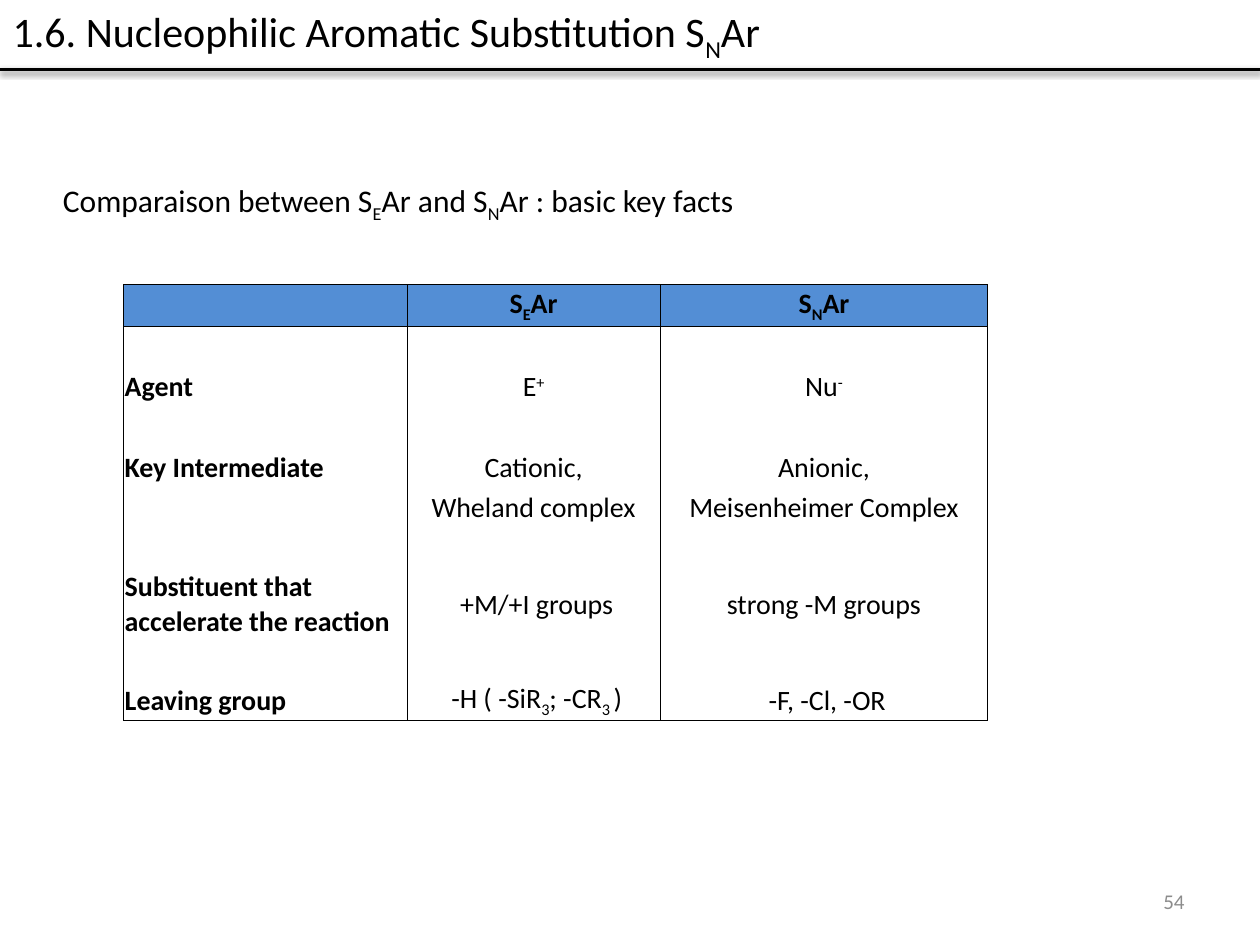
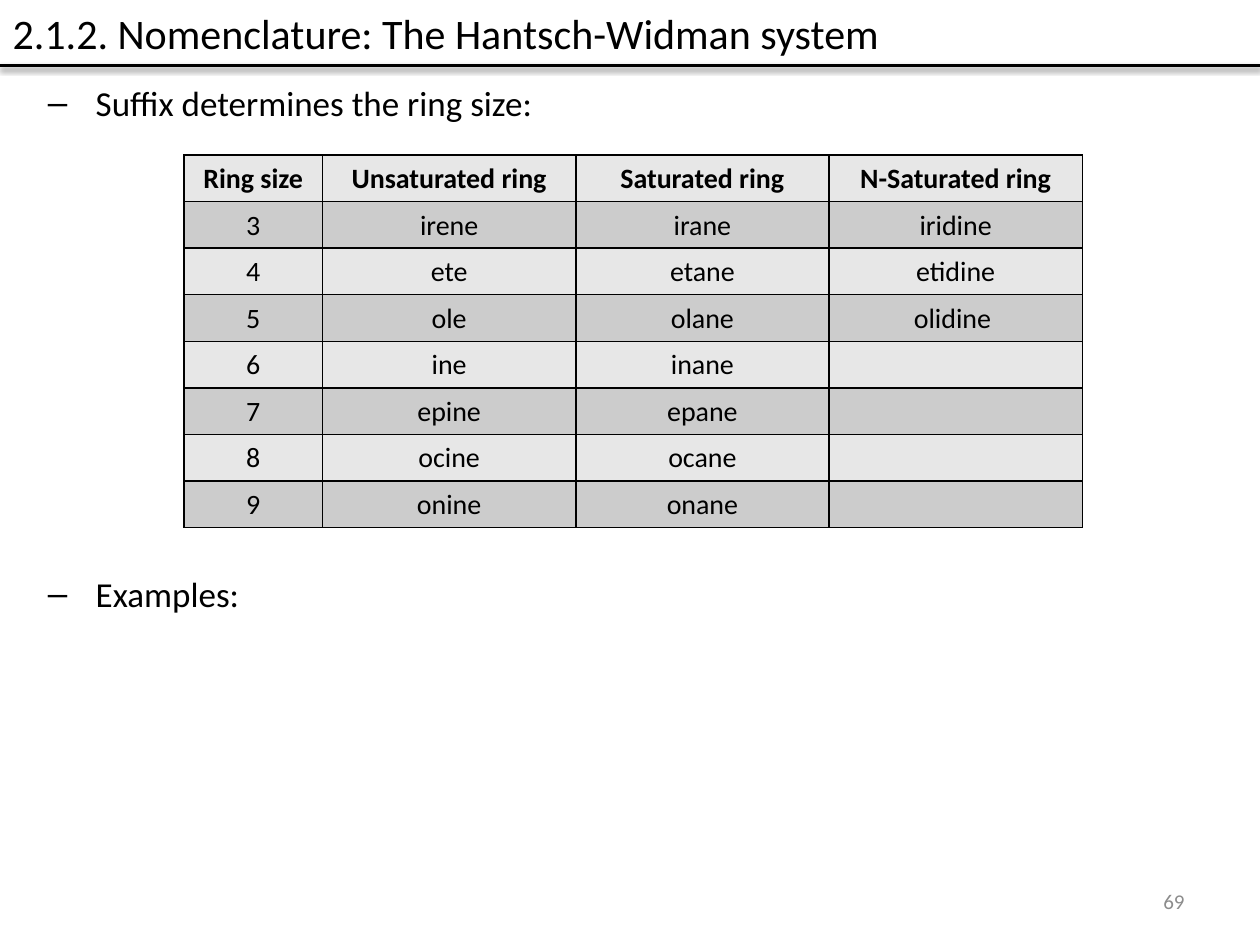
from dataclasses import dataclass
from typing import NamedTuple

from lxml import etree
from pptx import Presentation
from pptx.dml.color import RGBColor
from pptx.enum.shapes import MSO_CONNECTOR
from pptx.enum.text import MSO_ANCHOR, MSO_AUTO_SIZE, PP_ALIGN
from pptx.oxml.ns import qn
from pptx.util import Inches, Pt

LEFT, CENTER, RIGHT = PP_ALIGN.LEFT, PP_ALIGN.CENTER, PP_ALIGN.RIGHT
TOP, MIDDLE = MSO_ANCHOR.TOP, MSO_ANCHOR.MIDDLE
FIXED_SIZE = MSO_AUTO_SIZE.NONE
STRAIGHT = MSO_CONNECTOR.STRAIGHT

FONT = "Calibri"
COLORS = {
    "text": "000000",
    "line": "000000",
    "page_number": "8C8C8C",
    "blue_header": "538ED5",
    "light_band": "E7E7E7",
    "dark_band": "CCCCCC",
}
TITLE_ONLY, TITLE_AND_CONTENT = 5, 1


class Run(NamedTuple):
    text: str
    baseline: int = 0


class Box(NamedTuple):
    left: float
    top: float
    width: float
    height: float


@dataclass
class TextStyle:
    size: float
    color: str = "text"
    bold: bool = False
    align: PP_ALIGN = LEFT


@dataclass
class CellStyle:
    text: TextStyle
    fill: str | None
    borders: str


@dataclass
class TableSpec:
    left: float
    top: float
    columns: list[float]
    rows: list[float]
    line_width: float


Words = list[Run]


def plain(text: str) -> Words:
    return [Run(text)] if text else []


def sub(text: str) -> Run:
    return Run(text, -25)


def sup(text: str) -> Run:
    return Run(text, 30)


def reaction(letter: str) -> Words:
    """Name of a substitution type, such as S with a lowered E, then Ar."""
    return [Run("S"), sub(letter), Run("Ar")]


# Text helpers
def write(paragraph, words: Words, style: TextStyle) -> None:
    paragraph.alignment = style.align
    for part in words:
        run = paragraph.add_run()
        run.text = part.text
        run.font.name = FONT
        run.font.size = Pt(style.size)
        run.font.bold = style.bold
        run.font.color.rgb = RGBColor.from_string(COLORS[style.color])
        if part.baseline:
            run._r.get_or_add_rPr().set("baseline", str(part.baseline * 1000))


def place(shape, box: Box, anchor: MSO_ANCHOR):
    shape.left, shape.top, shape.width, shape.height = map(Inches, box)
    frame = shape.text_frame
    frame.word_wrap = True
    frame.auto_size = FIXED_SIZE
    frame.vertical_anchor = anchor
    return frame


def add_text(slide, box: Box, words: Words, style: TextStyle,
             anchor: MSO_ANCHOR = MIDDLE):
    frame = place(slide.shapes.add_textbox(*map(Inches, box)), box, anchor)
    write(frame.paragraphs[0], words, style)
    return frame


def write_dash_item(paragraph, words: Words, space_before: float) -> None:
    paragraph.space_before = Pt(space_before)
    write(paragraph, words, TextStyle(20))
    properties = paragraph._p.get_or_add_pPr()
    properties.set("marL", str(Inches(0.38)))
    properties.set("indent", str(-Inches(0.38)))
    etree.SubElement(properties, qn("a:buChar"), char="–")


# Parts shared by the slides
def add_title_rule(slide, y: float) -> None:
    rule = slide.shapes.add_connector(
        STRAIGHT, Inches(0), Inches(y), Inches(10), Inches(y))
    rule.line.color.rgb = RGBColor.from_string(COLORS["line"])
    rule.line.width = Pt(2)
    effects = etree.SubElement(rule._element.spPr, qn("a:effectLst"))
    shadow = etree.SubElement(
        effects, qn("a:outerShdw"), blurRad=str(Pt(3.1)), dist=str(Pt(1.6)),
        dir=str(90 * 60000), rotWithShape="0")
    color = etree.SubElement(shadow, qn("a:srgbClr"), val=COLORS["line"])
    etree.SubElement(color, qn("a:alpha"), val="38000")


def add_slide(presentation, layout: int, title: Words, title_width: float,
              rule_y: float, page: int):
    slide = presentation.slides.add_slide(presentation.slide_layouts[layout])
    frame = place(slide.shapes.title, Box(0, 0, title_width, rule_y), MIDDLE)
    write(frame.paragraphs[0], title, TextStyle(24))
    add_title_rule(slide, rule_y)
    add_text(slide, Box(7.17, 6.95, 2.33, 0.4), plain(str(page)),
             TextStyle(12, "page_number", align=RIGHT))
    return slide


# Table helpers
def set_borders(cell, sides: str, width: float) -> None:
    properties = cell._tc.get_or_add_tcPr()
    for side in "LRTB":
        line = etree.SubElement(properties, qn(f"a:ln{side}"), w=str(Pt(width)))
        if side in sides:
            fill = etree.SubElement(line, qn("a:solidFill"))
            etree.SubElement(fill, qn("a:srgbClr"), val=COLORS["line"])
        else:
            etree.SubElement(line, qn("a:noFill"))


def fill_cell(cell, words: Words, style: CellStyle, line_width: float) -> None:
    cell.margin_left = cell.margin_right = cell.margin_top = Inches(0.01)
    cell.margin_bottom = 0
    cell.vertical_anchor = MIDDLE
    set_borders(cell, style.borders, line_width)
    if style.fill:
        cell.fill.solid()
        cell.fill.fore_color.rgb = RGBColor.from_string(COLORS[style.fill])
    else:
        cell.fill.background()
    write(cell.text_frame.paragraphs[0], words, style.text)


def add_table(slide, spec: TableSpec, content: list[list[Words]],
              style_of) -> None:
    table = slide.shapes.add_table(
        len(spec.rows), len(spec.columns), Inches(spec.left), Inches(spec.top),
        Inches(sum(spec.columns)), Inches(sum(spec.rows))).table
    table.first_row = table.horz_banding = False
    for column, width in zip(table.columns, spec.columns):
        column.width = Inches(width)
    for row, height in zip(table.rows, spec.rows):
        row.height = Inches(height)
    for row_index, row_words in enumerate(content):
        for column_index, words in enumerate(row_words):
            fill_cell(table.cell(row_index, column_index), words,
                      style_of(row_index, column_index), spec.line_width)


# Slide 1: the two aromatic substitutions side by side
EMPTY_ROW: list[Words] = [[], [], []]
COMPARISON = [
    [[], reaction("E"), reaction("N")],
    EMPTY_ROW,
    [plain("Agent"), [Run("E"), sup("+")], [Run("Nu"), sup("-")]],
    EMPTY_ROW,
    [plain("Key Intermediate"), plain("Cationic,"), plain("Anionic,")],
    [[], plain("Wheland complex"), plain("Meisenheimer Complex")],
    EMPTY_ROW,
    [plain("Substituent that accelerate the reaction"),
     plain(" +M/+I groups"), plain("strong -M groups")],
    EMPTY_ROW,
    [plain("Leaving group"),
     [Run(" -H ( -SiR"), sub("3"), Run("; -CR"), sub("3 "), Run(")")],
     plain(" -F, -Cl, -OR")],
]


def comparison_style(row: int, column: int) -> CellStyle:
    text = TextStyle(16, bold=row == 0 or column == 0,
                     align=CENTER if column else LEFT)
    if row == 0:
        return CellStyle(text, "blue_header", "LRTB")
    edges = {1: "T", len(COMPARISON) - 1: "B"}
    return CellStyle(text, None, "LR" + edges.get(row, ""))


def build_comparison(presentation) -> None:
    title = plain("1.6. Nucleophilic Aromatic Substitution ") + reaction("N")
    slide = add_slide(presentation, TITLE_ONLY, title, 8.98, 0.55, 54)
    heading = [Run("Comparaison between "), *reaction("E"), Run(" and "),
               *reaction("N"), Run(" : basic key facts")]
    frame = add_text(slide, Box(0, 1.39, 10, 0.4), heading, TextStyle(18), TOP)
    frame.margin_left = Inches(0.5)
    rows = [0.33] + [0.32] * 6 + [0.57] + [0.32] * 2
    spec = TableSpec(0.98, 2.26, [2.25, 2.01, 2.6], rows, 0.5)
    add_table(slide, spec, COMPARISON, comparison_style)


# Slide 2: name endings by ring size
RING_SUFFIXES = [
    ("Ring size", "Unsaturated ring", "Saturated ring", "N-Saturated ring"),
    ("3", "irene", "irane", "iridine"),
    ("4", "ete", "etane", "etidine"),
    ("5", "ole", "olane", "olidine "),
    ("6", "ine", "inane", ""),
    ("7", "epine", "epane", ""),
    ("8", "ocine", "ocane", ""),
    ("9", "onine", "onane", ""),
]


def suffix_style(row: int, column: int) -> CellStyle:
    band = "dark_band" if row % 2 else "light_band"
    return CellStyle(TextStyle(16, bold=row == 0, align=CENTER), band, "LRTB")


def build_nomenclature(presentation) -> None:
    title = plain("2.1.2. Nomenclature: The Hantsch-Widman system")
    slide = add_slide(presentation, TITLE_AND_CONTENT, title, 9.55, 0.52, 69)
    frame = place(slide.placeholders[1], Box(0.28, 0.6, 9, 6.22), TOP)
    write_dash_item(frame.paragraphs[0],
                    plain("Suffix determines the ring size:"), 4)
    # The space before the second item leaves room for the table
    write_dash_item(frame.add_paragraph(), plain("Examples:"), 256.5)
    spec = TableSpec(1.46, 1.23, [1.1] + [2.01] * 3,
                     [0.37] * len(RING_SUFFIXES), 1)
    content = [[plain(text) for text in row] for row in RING_SUFFIXES]
    add_table(slide, spec, content, suffix_style)


def main() -> None:
    presentation = Presentation()
    presentation.slide_width = Inches(10)
    presentation.slide_height = Inches(7.5)
    build_comparison(presentation)
    build_nomenclature(presentation)
    presentation.save("out.pptx")


if __name__ == "__main__":
    main()
